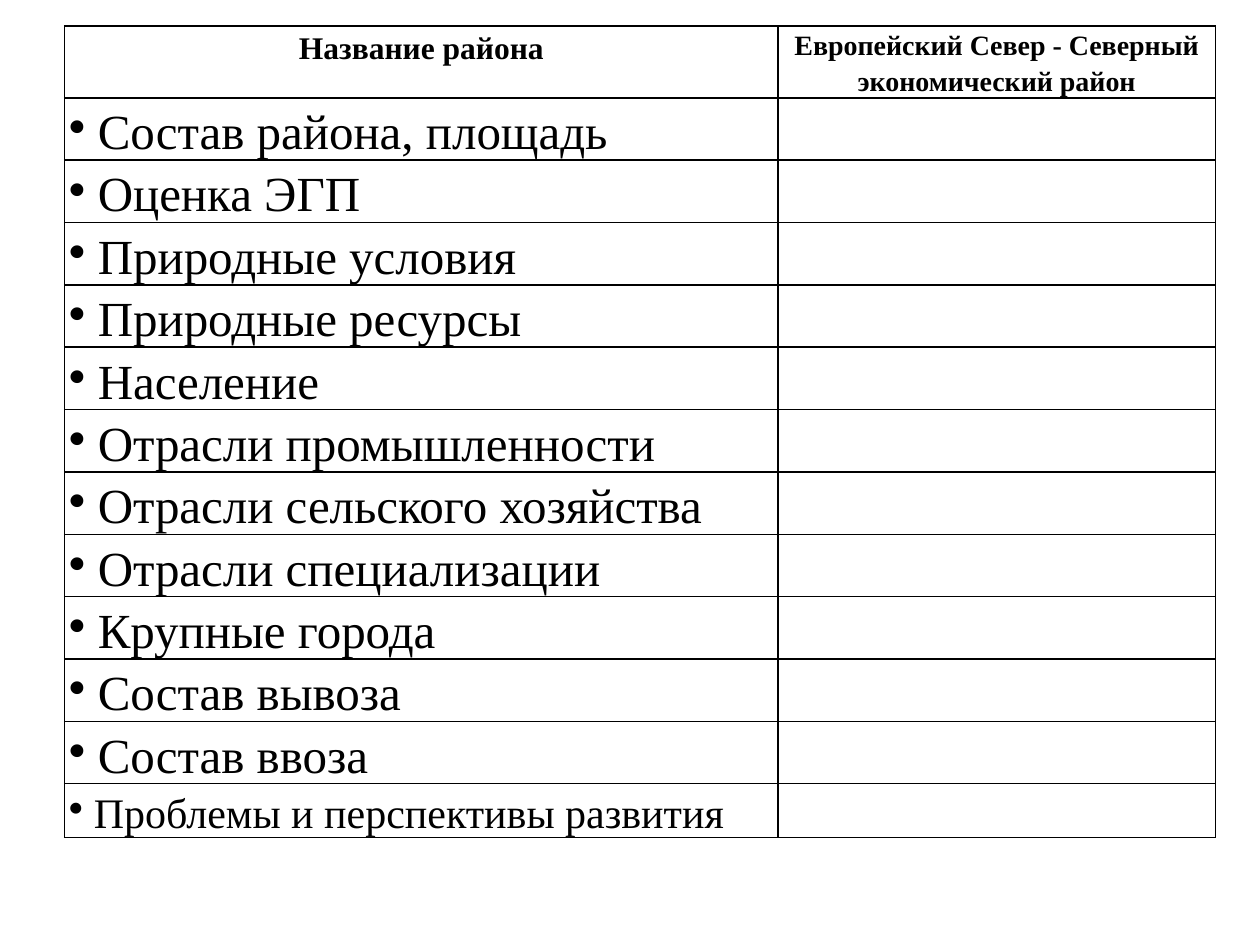
from dataclasses import dataclass

from lxml import etree
from pptx import Presentation
from pptx import util as u
from pptx.dml import color
from pptx.enum import text
from pptx.oxml import ns

Pt = u.Pt


@dataclass(frozen=True)
class Theme:
    font: str = "Times New Roman"
    ink: color.RGBColor = color.RGBColor(0, 0, 0)
    paper: color.RGBColor = color.RGBColor(255, 255, 255)
    border: float = 1
    line_spacing: float = 1.15
    side_margin: float = 2.4
    hanging: float = 0.59  # bullet indent as a share of the type size
    region_size: float = 18
    title_size: float = 16
    topic_size: float = 28
    last_topic_size: float = 24


THEME = Theme()
HEADINGS = [
    ("Название района", THEME.region_size),
    ("Европейский Север - Северный экономический район", THEME.title_size),
]
TOPICS = [
    "Состав района, площадь",
    "Оценка ЭГП",
    "Природные условия",
    "Природные ресурсы",
    "Население",
    "Отрасли промышленности",
    "Отрасли сельского хозяйства",
    "Отрасли специализации",
    "Крупные города",
    "Состав вывоза",
    "Состав ввоза",
    "Проблемы и перспективы развития",
]
COLUMN_SHARES = [0.62, 0.38]
HEADER_HEIGHT, TOPIC_HEIGHT, LAST_HEIGHT = 40.6, 35.6, 30.6


def style_cell(cell):
    """Plain cell with a thin border on all four sides."""
    properties = cell._tc.get_or_add_tcPr()
    for side in ("a:lnL", "a:lnR", "a:lnT", "a:lnB"):
        line = etree.SubElement(properties, ns.qn(side), w=str(Pt(THEME.border)))
        fill = etree.SubElement(line, ns.qn("a:solidFill"))
        etree.SubElement(fill, ns.qn("a:srgbClr"), val=str(THEME.ink))
    cell.fill.background()
    cell.margin_left = cell.margin_right = Pt(THEME.side_margin)
    cell.margin_top = cell.margin_bottom = 0


def write_cell(cell, words, size, bold=False, bullet=False):
    paragraph = cell.text_frame.paragraphs[0]
    if bullet:
        properties = paragraph._p.get_or_add_pPr()
        indent = Pt(round(size * THEME.hanging, 1))
        properties.set("marL", str(indent))
        properties.set("indent", str(-indent))
        etree.SubElement(properties, ns.qn("a:buChar"), char="•")
    else:
        paragraph.alignment = text.PP_ALIGN.CENTER
    paragraph.line_spacing = THEME.line_spacing
    run = paragraph.add_run()
    run.text = words
    run.font.name = THEME.font
    run.font.size = Pt(size)
    run.font.bold = bold
    run.font.color.rgb = THEME.ink


def add_region_table(slide, left, top, width):
    heights = [HEADER_HEIGHT] + [TOPIC_HEIGHT] * (len(TOPICS) - 1) + [LAST_HEIGHT]
    frame = slide.shapes.add_table(
        len(heights), len(COLUMN_SHARES),
        Pt(left), Pt(top), Pt(width), Pt(sum(heights)))
    table = frame.table
    table.first_row = table.horz_banding = False
    for column, share in zip(table.columns, COLUMN_SHARES):
        column.width = Pt(width * share)
    for row, height in zip(table.rows, heights):
        row.height = Pt(height)
    for cell in table.iter_cells():
        style_cell(cell)

    # Heading row
    for index, (words, size) in enumerate(HEADINGS):
        write_cell(table.cell(0, index), words, size, bold=True)

    # Topics; the longest, last one is set smaller
    for index, topic in enumerate(TOPICS, start=1):
        last = index == len(TOPICS)
        size = THEME.last_topic_size if last else THEME.topic_size
        write_cell(table.cell(index, 0), topic, size, bullet=True)


def main():
    presentation = Presentation()
    presentation.slide_width, presentation.slide_height = Pt(720), Pt(540)
    slide = presentation.slides.add_slide(presentation.slide_layouts[6])
    slide.background.fill.solid()
    slide.background.fill.fore_color.rgb = THEME.paper
    add_region_table(slide, left=37, top=15, width=657.5)
    presentation.save("out.pptx")


if __name__ == "__main__":
    main()
